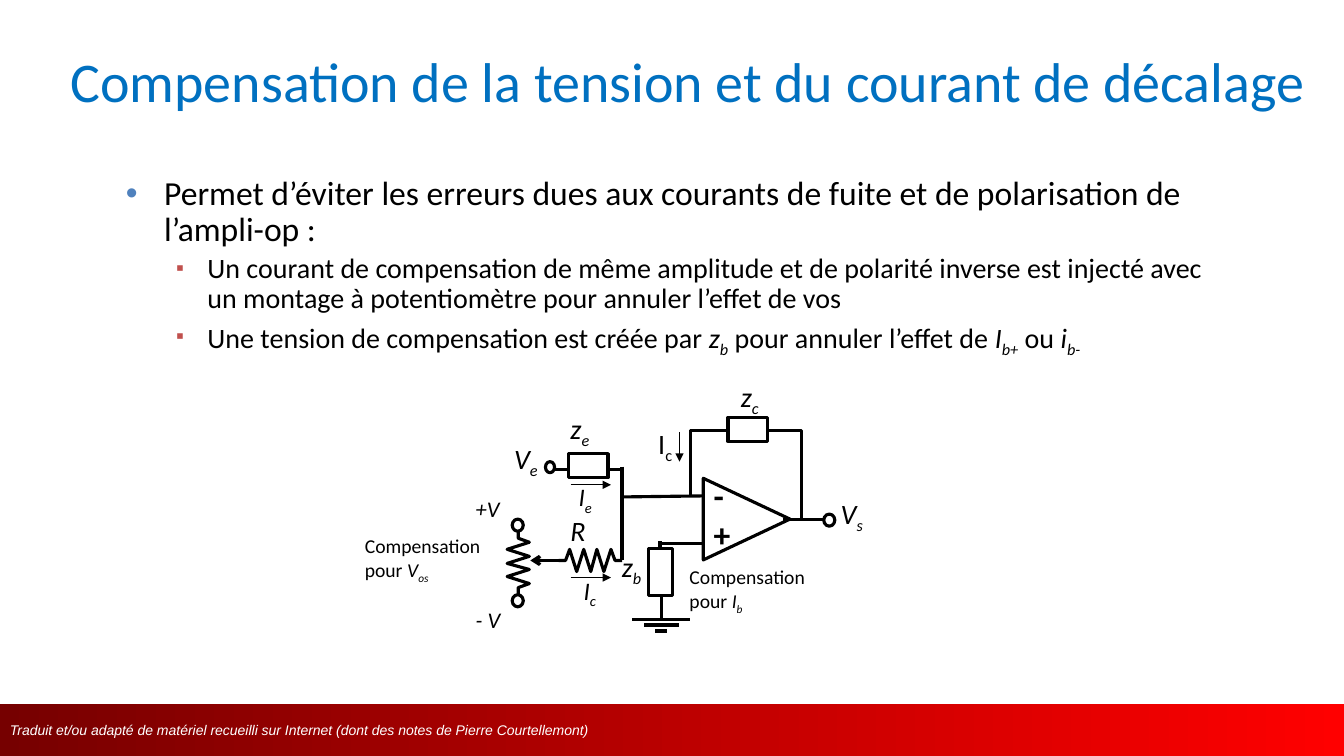
from lxml import etree
from pptx import Presentation
from pptx.dml.color import RGBColor
from pptx.enum.shapes import MSO_CONNECTOR, MSO_SHAPE
from pptx.enum.text import MSO_ANCHOR, MSO_AUTO_SIZE, PP_ALIGN
from pptx.oxml.ns import qn
from pptx.util import Pt

PX = 9144  # 100 px to the inch
RECT, OVAL, TRIANGLE = MSO_SHAPE.RECTANGLE, MSO_SHAPE.OVAL, MSO_SHAPE.ISOSCELES_TRIANGLE
STRAIGHT = MSO_CONNECTOR.STRAIGHT
LEFT, MIDDLE = PP_ALIGN.LEFT, MSO_ANCHOR.MIDDLE
NO_FIT, GROW = MSO_AUTO_SIZE.NONE, MSO_AUTO_SIZE.SHAPE_TO_FIT_TEXT
HEX = {"black": "000000", "white": "FFFFFF", "title": "0070C0", "dark_red": "760000",
       "red": "FF0000", "bullet": "4F81BD", "sub_bullet": "C0504D"}
COLORS = {name: RGBColor.from_string(value) for name, value in HEX.items()}


def write(p, runs, size):
    """Fill a paragraph with (text, style) runs; style holds i, b or s (subscript)."""
    p.font.name, p.font.size, p.font.color.rgb = "Calibri", Pt(size), COLORS["black"]
    for text, style in runs:
        r = p.add_run()
        r.text = text
        if "i" in style:
            r.font.italic = True
        if "b" in style:
            r.font.bold = True
        if "s" in style:
            r._r.get_or_add_rPr().set("baseline", "-25000")


def outline(shape):
    shape.shadow.inherit = False
    shape.fill.background()
    shape.line.color.rgb = COLORS["black"]
    shape.line.width = Pt(2.25)


prs = Presentation()
prs.slide_width, prs.slide_height = 1333 * PX, 750 * PX
s = prs.slides.add_slide(prs.slide_layouts[5])

# Footer band
band = s.shapes.add_shape(RECT, 0, 698 * PX, 1333 * PX, 52 * PX)
band.shadow.inherit = False
band.line.fill.background()
band.fill.gradient()
band.fill.gradient_angle = 0
for stop, name in zip(band.fill.gradient_stops, ("dark_red", "red")):
    stop.color.rgb = COLORS[name]
tf = band.text_frame
tf.vertical_anchor = MIDDLE
p = tf.paragraphs[0]
p.text = "Traduit et/ou adapté de matériel recueilli sur Internet (dont des notes de Pierre Courtellemont)"
p.alignment = LEFT
p.font.name, p.font.size, p.font.italic = "Arial", Pt(10), True
p.font.color.rgb = COLORS["white"]

# Title
title = s.shapes.title
title.left, title.top, title.width, title.height = 60 * PX, 17 * PX, 1252 * PX, 125 * PX
tf = title.text_frame
tf.auto_size, tf.vertical_anchor = NO_FIT, MIDDLE
p = tf.paragraphs[0]
p.text = "Compensation de la tension et du courant de décalage"
p.alignment = LEFT
p.font.name, p.font.size, p.font.color.rgb = "Calibri", Pt(40), COLORS["title"]

# Bulleted text: level, runs
body = [
    (0, [("Permet d’éviter les erreurs dues aux courants de fuite et de polarisation de l’ampli-op :", "")]),
    (1, [("Un courant de compensation de même amplitude et de polarité inverse est injecté avec "
          "un montage à potentiomètre pour annuler l’effet de vos", "")]),
    (1, [("Une tension de compensation est créée par ", ""), ("z", "i"), ("b", "is"),
         (" pour annuler l’effet de ", ""), ("I", "i"), ("b+", "is"),
         (" ou ", ""), ("i", "i"), ("b-", "is")]),
]
# size, left margin, indent, bullet, bullet colour, bullet size
levels = [(24, 38, -38, "•", "bullet", 100), (20, 81, -31, "▪", "sub_bullet", 80)]
tf = s.shapes.add_textbox(115 * PX, 170 * PX, 1110 * PX, 205 * PX).text_frame
tf.word_wrap = True
for i, (level, runs) in enumerate(body):
    size, margin, indent, char, color, percent = levels[level]
    p = tf.add_paragraph() if i else tf.paragraphs[0]
    p.level, p.line_spacing, p.space_before = level, 0.9, Pt(size // 5)
    write(p, runs, size)
    pPr = p._p.get_or_add_pPr()
    pPr.set("marL", str(margin * PX))
    pPr.set("indent", str(indent * PX))
    bullet = [etree.Element(qn(tag)) for tag in ("a:buClr", "a:buSzPct", "a:buFont", "a:buChar")]
    etree.SubElement(bullet[0], qn("a:srgbClr"), val=HEX[color])
    bullet[1].set("val", str(percent * 1000))
    bullet[2].set("typeface", "Arial")
    bullet[3].set("char", char)
    pPr.find(qn("a:defRPr")).getprevious().addnext(bullet[0])
    for before, after in zip(bullet, bullet[1:]):
        before.addnext(after)

# Components: preset, left, top, width, height, rotation
components = [
    (RECT, 722, 414, 39, 24, 0), (RECT, 564, 450, 39, 24, 0), (RECT, 643, 544, 24, 47, 0),
    (TRIANGLE, 700, 472, 81, 86, 90),
    (OVAL, 817, 510, 11, 12, 0), (OVAL, 541, 458, 9, 11, 0),
    (OVAL, 508, 515, 11, 12, 0), (OVAL, 508, 590, 11, 12, 0),
]
for preset, x, y, w, h, rotation in components:
    shape = s.shapes.add_shape(preset, x * PX, y * PX, w * PX, h * PX)
    shape.rotation = rotation
    outline(shape)

# Resistor zigzag, feedback corners
along = [0, 7, 11, 18, 25, 32, 38, 45, 52, 56, 63]
across = [0, 0] + [11, -11] * 3 + [11, 0, 0]
zigzag = list(zip(along, across))
outlines = [
    [(554 + a, 556 - b) for a, b in zigzag],
    [(514 + b, 527 + a) for a, b in zigzag],
    [(761, 427), (795, 427), (795, 514)],
    [(721, 427), (685, 427), (685, 491)],
]
for points in outlines:
    builder = s.shapes.build_freeform(*points[0], scale=PX)
    builder.add_line_segments(points[1:], close=False)
    outline(builder.convert_to_shape())

# Wires, ground and arrows: x1, y1, x2, y2, width, arrowhead
wires = [
    (697, 492, 617, 493, 2.25, None), (697, 539, 657, 539, 2.25, None),
    (817, 515, 777, 515, 2.25, None), (604, 466, 619, 466, 2.25, None),
    (549, 466, 564, 466, 2.25, None), (617, 463, 617, 556, 2.75, None),
    (655, 537, 655, 546, 2.75, None), (656, 615, 656, 591, 2.25, None),
    (627, 615, 684, 615, 2.25, None), (639, 620, 673, 620, 2.25, None),
    (650, 626, 662, 626, 2.25, None),
    (554, 556, 526, 556, 2.25, "arrow"), (566, 481, 606, 481, 0.75, "triangle"),
    (674, 429, 674, 458, 0.75, "triangle"), (566, 573, 606, 573, 0.75, "triangle"),
]
for x1, y1, x2, y2, width, head in wires:
    wire = s.shapes.add_connector(STRAIGHT, x1 * PX, y1 * PX, x2 * PX, y2 * PX)
    wire.line.color.rgb = COLORS["black"]
    wire.line.width = Pt(width)
    if head:
        etree.SubElement(wire.line._get_or_add_ln(), qn("a:tailEnd"), type=head)
    etree.SubElement(wire._element.spPr, qn("a:effectLst"))

# Labels: left, top, width, height, size, wrap, runs
labels = [
    (725, 372, 39, 43, 20, False, [("z", "i"), ("c", "is")]),
    (556, 403, 46, 43, 20, False, [("z", "i"), ("e", "is")]),
    (607, 540, 47, 43, 20, False, [("z", "i"), ("b", "is")]),
    (500, 433, 51, 43, 20, False, [("V", "i"), ("e", "is")]),
    (824, 488, 43, 43, 20, False, [("V", "i"), ("s", "is")]),
    (564, 473, 40, 40, 18, False, [("I", "i"), ("e", "is")]),
    (569, 566, 39, 40, 18, True, [("I", "i"), ("c", "is")]),
    (643, 418, 41, 44, 20, False, [("I", ""), ("c", "s")]),
    (556, 505, 35, 43, 20, False, [("R", "i")]),
    (698, 466, 30, 50, 24, False, [("-", "b")]),
    (698, 505, 37, 50, 24, False, [("+", "b")]),
    (462, 486, 45, 37, 16, False, [("+V", "i")]),
    (462, 596, 45, 37, 16, False, [("- V", "i")]),
    (352, 525, 150, 57, 14, True, [("Compensation pour ", ""), ("V", "i"), ("os", "is")]),
    (674, 556, 150, 57, 14, True, [("Compensation pour ", ""), ("I", "i"), ("b", "is")]),
]
for x, y, w, h, size, wrap, runs in labels:
    tf = s.shapes.add_textbox(x * PX, y * PX, w * PX, h * PX).text_frame
    tf.word_wrap, tf.auto_size = wrap, GROW
    write(tf.paragraphs[0], runs, size)

prs.save("out.pptx")
